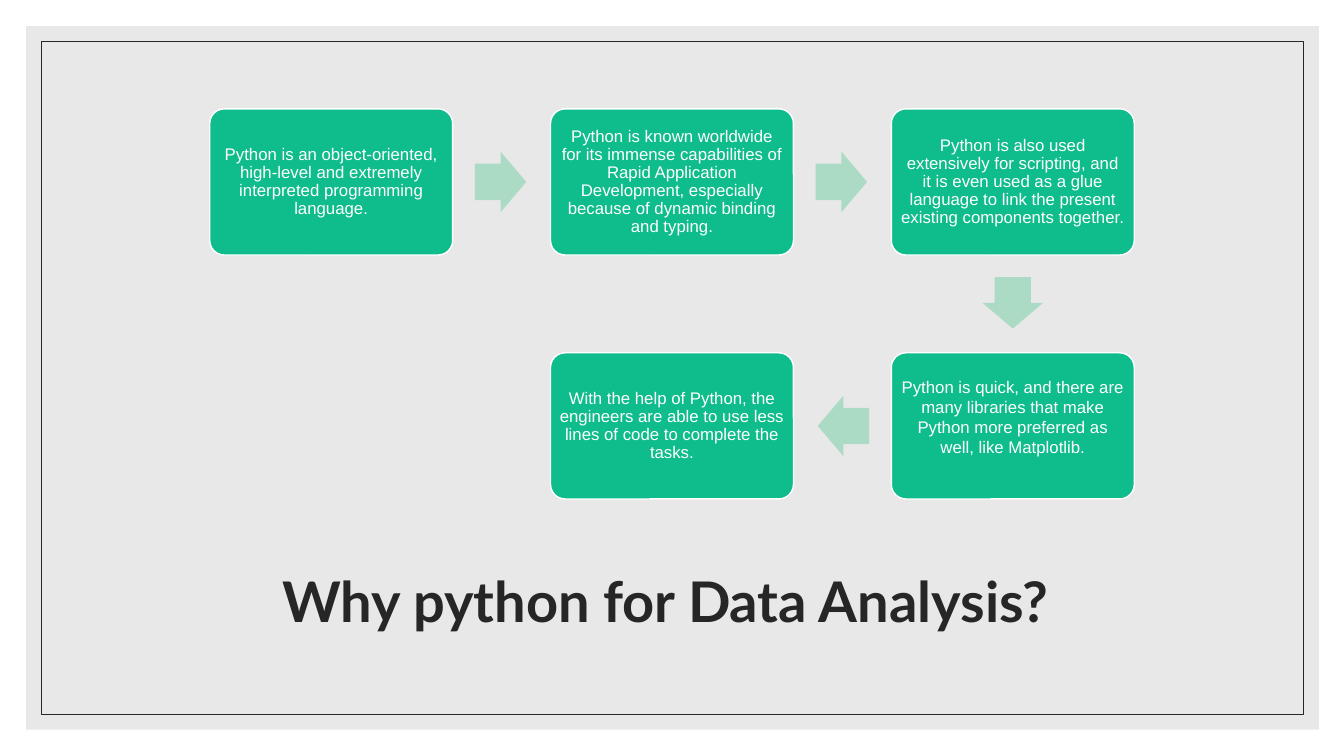
import math

import pptx
import pptx.dml.color
import pptx.enum.shapes
import pptx.enum.text
import pptx.util
from lxml import etree
from pptx.oxml.ns import qn

Inches = pptx.util.Inches
Pt = pptx.util.Pt
SHAPES = pptx.enum.shapes.MSO_SHAPE
COLORS = {
    "panel": "D9D9D9",
    "ink": "262626",
    "step": "0EBC8C",
    "arrow": "ABDAC5",
    "white": "FFFFFF",
}
STEP_W, STEP_H = 2.41, 1.45
PITCH_X, PITCH_Y = 3.38, 2.42
ARROW_W, ARROW_H = 0.51, 0.6
ARROW_GAP = 0.22
BLANK_LINE = 0.18

# Column, row, line spacing, extra bottom inset, direction of the next arrow, text
STEPS = [
    (0, 0, 0.9, 0, 0,
     "Python is an object-oriented, high-level and extremely interpreted "
     "programming language."),
    (1, 0, 0.9, 0, 0,
     "Python is known worldwide for its immense capabilities of Rapid Application "
     "Development, especially because of dynamic binding and typing."),
    (2, 0, 0.9, 0, 90,
     "Python is also used extensively for scripting, and it is even used as a glue "
     "language to link the present existing components together."),
    (2, 1, 1.0, BLANK_LINE, 180,
     "Python is quick, and there are many libraries that make Python more preferred "
     "as well, like Matplotlib."),
    (1, 1, 0.9, 0, None,
     "With the help of Python, the engineers are able to use less lines of code to "
     "complete the tasks."),
]


def rgb(name):
    return pptx.dml.color.RGBColor.from_string(COLORS[name])


def add_block(slide, kind, box, fill=None, line=None, line_width=1):
    block = slide.shapes.add_shape(kind, *map(Inches, box))
    block.shadow.inherit = False
    if fill:
        block.fill.solid()
        block.fill.fore_color.rgb = rgb(fill)
    else:
        block.fill.background()
    if line:
        block.line.color.rgb = rgb(line)
        block.line.width = Pt(line_width)
    else:
        block.line.fill.background()
    return block


def write(frame, text, size, font, color, spacing, bold=False):
    frame.word_wrap = True
    frame.vertical_anchor = pptx.enum.text.MSO_ANCHOR.MIDDLE
    frame.text = text
    paragraph = frame.paragraphs[0]
    paragraph.alignment = pptx.enum.text.PP_ALIGN.CENTER
    paragraph.line_spacing = spacing
    style = paragraph.runs[0].font
    style.size, style.name, style.bold = Pt(size), font, bold
    style.color.rgb = rgb(color)


def add_frame(slide, left, top, width, height):
    """Draw the translucent panel and the thin border inset within it."""
    panel = add_block(slide, SHAPES.RECTANGLE, (left, top, width, height), "panel")
    panel_color = panel.fill._xPr.find(".//" + qn("a:srgbClr"))
    etree.SubElement(panel_color, qn("a:alpha")).set("val", "60000")
    inset = 0.15
    add_block(slide, SHAPES.RECTANGLE,
              (left + inset, top + inset, width - 2 * inset, height - 2 * inset),
              line="ink", line_width=0.5)


def add_title(slide, box):
    title = slide.shapes.add_textbox(*map(Inches, box))
    write(title.text_frame, "Why python for Data Analysis? ", 40, "Lato", "ink", 0.9, True)


def add_step(slide, left, top, text, spacing, extra_bottom):
    step = add_block(slide, SHAPES.ROUNDED_RECTANGLE,
                     (left, top, STEP_W, STEP_H), "step", "white")
    step.adjustments[0] = 0.1
    frame = step.text_frame
    frame.margin_left = frame.margin_right = frame.margin_top = Inches(0.05)
    frame.margin_bottom = Inches(0.05 + extra_bottom)
    write(frame, text, 12, "Arial", "white", spacing)


def add_step_arrow(slide, left, top, angle):
    """Place an arrow just outside the step's side that faces the given angle."""
    reach = ARROW_GAP + ARROW_W / 2
    center_x = left + STEP_W / 2 + math.cos(math.radians(angle)) * (STEP_W / 2 + reach)
    center_y = top + STEP_H / 2 + math.sin(math.radians(angle)) * (STEP_H / 2 + reach)
    arrow = add_block(slide, SHAPES.RIGHT_ARROW,
                      (center_x - ARROW_W / 2, center_y - ARROW_H / 2, ARROW_W, ARROW_H),
                      "arrow")
    arrow.adjustments[0], arrow.adjustments[1] = 0.6, 0.5
    arrow.rotation = angle


def add_process(slide, left, top):
    for column, row, spacing, extra_bottom, angle, text in STEPS:
        step_left, step_top = left + column * PITCH_X, top + row * PITCH_Y
        add_step(slide, step_left, step_top, text, spacing, extra_bottom)
        if angle is not None:
            add_step_arrow(slide, step_left, step_top, angle)


def main():
    deck = pptx.Presentation()
    deck.slide_width, deck.slide_height = Inches(13.33), Inches(7.5)
    slide = deck.slides.add_slide(deck.slide_layouts[6])
    add_frame(slide, 0.26, 0.26, 12.82, 6.98)
    add_title(slide, (1.17, 5.25, 11, 1.5))
    add_process(slide, 2.08, 1.08)
    deck.save("out.pptx")


if __name__ == "__main__":
    main()
